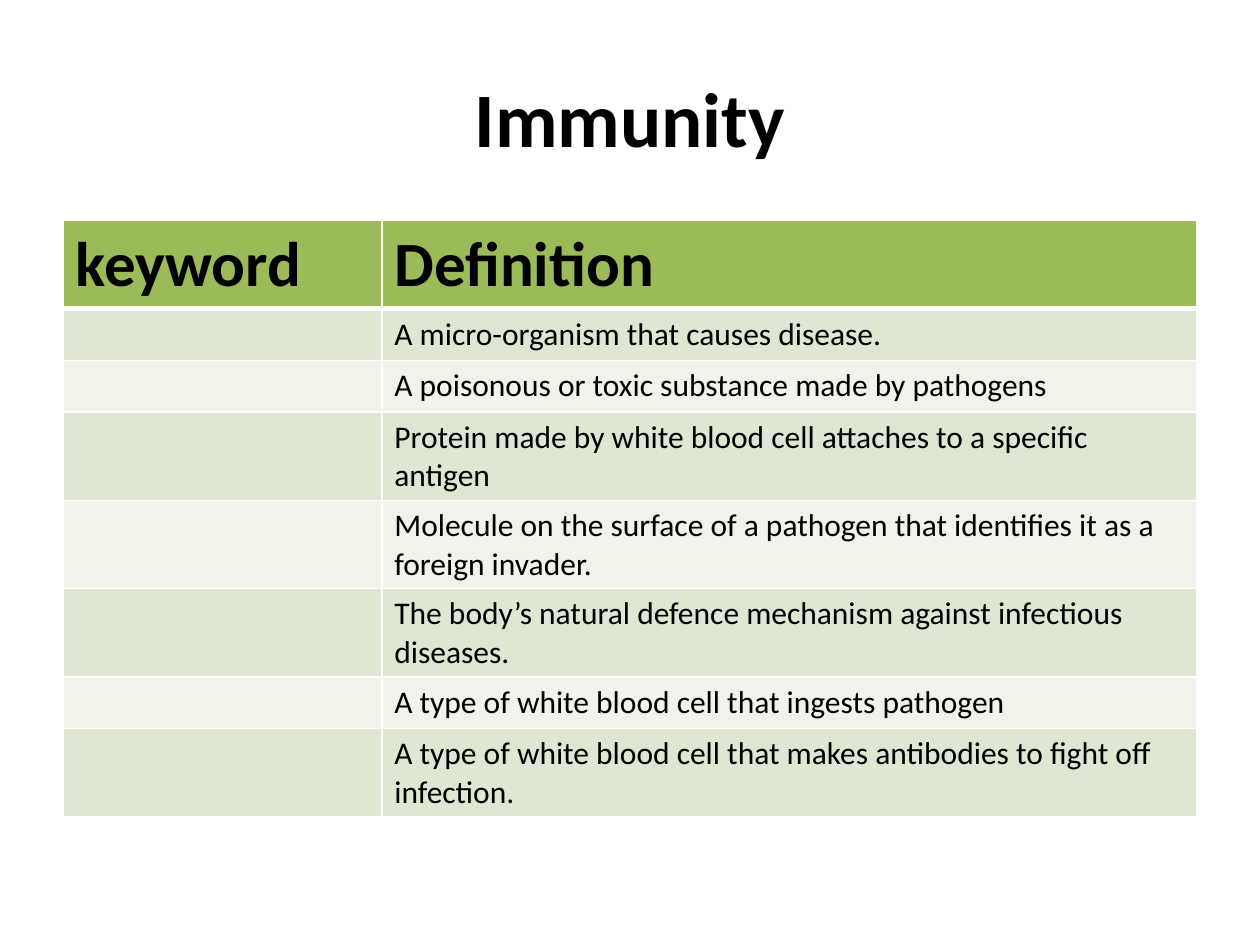
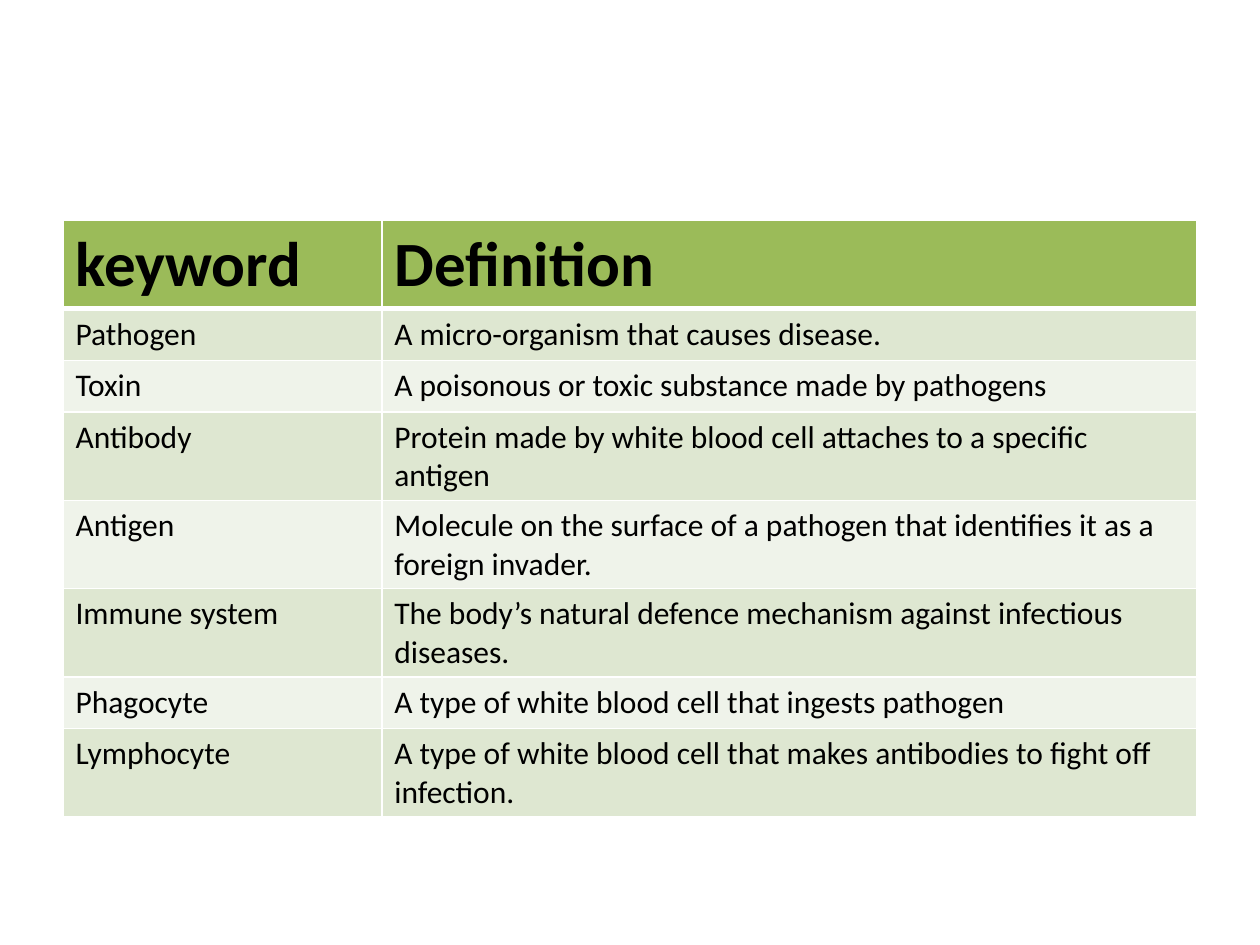
from lxml import etree
from pptx import Presentation
from pptx.dml.color import RGBColor
from pptx.enum.text import MSO_ANCHOR, PP_ALIGN
from pptx.oxml.ns import qn
from pptx.util import Inches, Pt

CENTER, LEFT, MIDDLE = PP_ALIGN.CENTER, PP_ALIGN.LEFT, MSO_ANCHOR.MIDDLE

FONT = "Calibri"
BLACK, WHITE, GREEN = "000000", "FFFFFF", "9BBB59"
BANDS = ("DEE7D1", "EFF3EA")

TITLE = "Immunity"
HEADINGS = ("keyword", "Definition")
GLOSSARY = [
    ("Pathogen", "A micro-organism that causes disease."),
    ("Toxin", "A poisonous or toxic substance made by pathogens"),
    ("Antibody", "Protein made by white blood cell attaches to a specific antigen"),
    ("Antigen", "Molecule on the surface of a pathogen that identifies it as a foreign invader."),
    ("Immune system", "The body’s natural defence mechanism against infectious diseases."),
    ("Phagocyte", "A type of white blood cell that ingests pathogen"),
    ("Lymphocyte", "A type of white blood cell that makes antibodies to fight off infection."),
]
SLIDES = [
    {"title": TITLE, "show_keywords": False},
    {"title": None, "show_keywords": True},
]

MARGIN, CONTENT_WIDTH = 0.5, 9
TITLE_TOP, TITLE_HEIGHT = 0.3, 1.25
TABLE_TOP, ROW_HEIGHT = 1.75, 0.41
COLUMN_WIDTHS = (2.53, 6.47)
THIN, THICK = 1, 3


def rgb(color):
    return RGBColor.from_string(color)


def write(frame, text, size=18, bold=False, color=BLACK, align=LEFT):
    para = frame.paragraphs[0]
    para.alignment = align
    span = para.add_run()
    span.text = text
    span.font.name = FONT
    span.font.size = Pt(size)
    span.font.bold = bold
    span.font.color.rgb = rgb(color)


def set_borders(cell, top, bottom):
    """Draw white cell borders; top and bottom are widths in points."""
    properties = cell._tc.get_or_add_tcPr()
    widths = {"a:lnL": THIN, "a:lnR": THIN, "a:lnT": top, "a:lnB": bottom}
    for tag, width in widths.items():
        line = etree.SubElement(properties, qn(tag), w=str(Pt(width)))
        fill = etree.SubElement(line, qn("a:solidFill"))
        etree.SubElement(fill, qn("a:srgbClr"), val=WHITE)


def add_title(page, text):
    box = page.shapes.add_textbox(Inches(MARGIN), Inches(TITLE_TOP),
                                  Inches(CONTENT_WIDTH), Inches(TITLE_HEIGHT))
    box.text_frame.word_wrap = True
    box.text_frame.vertical_anchor = MIDDLE
    write(box.text_frame, text, size=44, bold=True, align=CENTER)


def add_glossary(page, show_keywords):
    rows = [HEADINGS] + [(keyword if show_keywords else "", definition)
                         for keyword, definition in GLOSSARY]
    table = page.shapes.add_table(
        len(rows), len(HEADINGS), Inches(MARGIN), Inches(TABLE_TOP),
        Inches(CONTENT_WIDTH), Inches(ROW_HEIGHT * len(rows))).table
    for column, width in zip(table.columns, COLUMN_WIDTHS):
        column.width = Inches(width)
    for row_number, texts in enumerate(rows):
        is_heading = row_number == 0
        for column_number, text in enumerate(texts):
            cell = table.cell(row_number, column_number)
            set_borders(cell, top=THICK if row_number == 1 else THIN,
                        bottom=THICK if is_heading else THIN)
            cell.fill.solid()
            cell.fill.fore_color.rgb = rgb(
                GREEN if is_heading else BANDS[(row_number - 1) % 2])
            if text:
                write(cell.text_frame, text, size=36 if is_heading else 18,
                      bold=is_heading)


def main():
    deck = Presentation()
    deck.slide_width, deck.slide_height = Inches(10), Inches(7.5)
    blank = deck.slide_layouts[6]
    for content in SLIDES:
        page = deck.slides.add_slide(blank)
        if content["title"]:
            add_title(page, content["title"])
        add_glossary(page, content["show_keywords"])
    deck.save("out.pptx")


if __name__ == "__main__":
    main()
